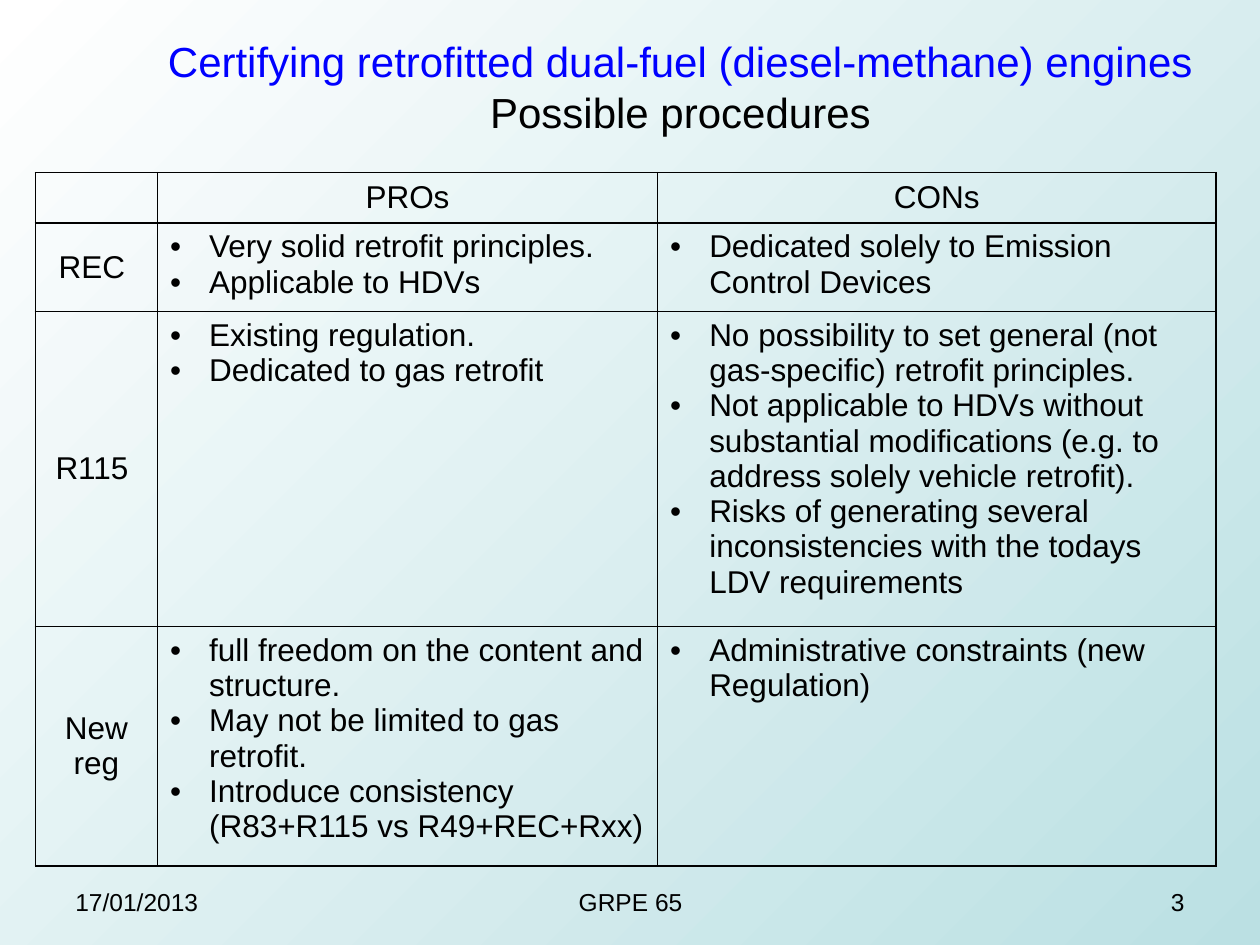
from dataclasses import dataclass

from lxml import etree
from pptx import Presentation
from pptx.dml.color import RGBColor
from pptx.enum.text import MSO_ANCHOR, PP_ALIGN
from pptx.oxml.ns import qn
from pptx.util import Inches, Pt

LEFT, CENTER, RIGHT = PP_ALIGN.LEFT, PP_ALIGN.CENTER, PP_ALIGN.RIGHT
TOP, MIDDLE = MSO_ANCHOR.TOP, MSO_ANCHOR.MIDDLE


@dataclass(frozen=True)
class Theme:
    font: str = "Arial"
    ink: str = "000000"
    accent: str = "0000FF"
    paper: tuple = ("FFFFFF", "BBE0E3")
    title: int = 24
    body: int = 18
    footer: int = 14
    border: int = 1
    indent: float = 0.31


class Deck:
    """Draws elements on the current slide, on a grid of 100 columns by 75 rows."""

    def __init__(self, theme):
        self.theme = theme
        self.prs = Presentation()
        self.prs.slide_width, self.prs.slide_height = Inches(10), Inches(7.5)
        self.s = self.prs.slides.add_slide(self.prs.slide_layouts[6])

    def x(self, columns):
        return round(self.prs.slide_width * columns / 100)

    def y(self, rows):
        return round(self.prs.slide_height * rows / 75)

    def background(self):
        fill = self.s.background.fill
        fill.gradient()
        fill.gradient_angle = 315
        for stop, color in zip(fill.gradient_stops, self.theme.paper):
            stop.color.rgb = RGBColor.from_string(color)

    def style(self, p, size, align, colors=None):
        p.alignment = align
        for i, r in enumerate(p.runs):
            r.font.name = self.theme.font
            r.font.size = Pt(size)
            color = colors[i] if colors else self.theme.ink
            r.font.color.rgb = RGBColor.from_string(color)

    def text(self, box, text, size, align=LEFT, anchor=TOP, colors=None):
        left, top, width, height = box
        sp = self.s.shapes.add_textbox(self.x(left), self.y(top), self.x(width), self.y(height))
        tf = sp.text_frame
        tf.word_wrap = True
        tf.vertical_anchor = anchor
        p = tf.paragraphs[0]
        p.text = text
        self.style(p, size, align, colors)

    def bullet(self, p):
        pPr = p._p.get_or_add_pPr()
        indent = Inches(self.theme.indent)
        pPr.set("marL", str(indent))
        pPr.set("indent", str(-indent))
        etree.SubElement(pPr, qn("a:buFont"), typeface=self.theme.font)
        etree.SubElement(pPr, qn("a:buChar"), char="•")

    def borders(self, cell):
        tcPr = cell._tc.get_or_add_tcPr()
        for side in ("a:lnL", "a:lnR", "a:lnT", "a:lnB"):
            ln = etree.SubElement(tcPr, qn(side), w=str(Pt(self.theme.border)))
            fill = etree.SubElement(ln, qn("a:solidFill"))
            etree.SubElement(fill, qn("a:srgbClr"), val=self.theme.ink)

    def cell(self, cell, text, bulleted):
        self.borders(cell)
        cell.fill.background()
        cell.vertical_anchor = TOP if bulleted else MIDDLE
        cell.text_frame.text = text
        for p in cell.text_frame.paragraphs:
            if bulleted:
                self.bullet(p)
            self.style(p, self.theme.body, LEFT if bulleted else CENTER)

    def table(self, left, top, widths, heights, rows):
        table = self.s.shapes.add_table(
            len(heights), len(widths), self.x(left), self.y(top),
            self.x(sum(widths)), self.y(sum(heights))).table
        table.first_row = table.horz_banding = False
        for column, width in zip(table.columns, widths):
            column.width = self.x(width)
        for row, height in zip(table.rows, heights):
            row.height = self.y(height)
        for i, row in enumerate(rows):
            for j, text in enumerate(row):
                self.cell(table.cell(i, j), text, bulleted=i > 0 and j > 0)


PROCEDURES = [
    ("", "PROs", "CONs"),
    ("REC ",
     "Very solid retrofit principles.\nApplicable to HDVs",
     "Dedicated solely to Emission Control Devices"),
    ("R115 ",
     "Existing regulation.\nDedicated to gas retrofit",
     "No possibility to set general (not gas-specific) retrofit principles.\n"
     "Not applicable to HDVs without substantial modifications "
     "(e.g. to address solely vehicle retrofit).\n"
     "Risks of generating several inconsistencies with the todays LDV requirements"),
    ("New\nreg",
     "full freedom on the content and structure.\n"
     "May not be limited to gas retrofit.\n"
     "Introduce consistency (R83+R115 vs R49+REC+Rxx)",
     "Administrative constraints (new Regulation)"),
]
FOOTERS = [
    (5, 23.3, "17/01/2013", LEFT),
    (34.2, 31.7, "GRPE 65", CENTER),
    (71.7, 23.3, "3", RIGHT),
]


def main():
    theme = Theme()
    deck = Deck(theme)
    deck.background()
    deck.text((11.5, 2.9, 85, 7.9),
              "Certifying retrofitted dual-fuel (diesel-methane) engines\vPossible procedures",
              theme.title, CENTER, MIDDLE, (theme.accent, theme.ink))
    for left, width, text, align in FOOTERS:
        deck.text((left, 69.9, width, 3.6), text, theme.footer, align)
    deck.table(2.8, 13.7, (9.7, 39.7, 44.3), (3.9, 6.8, 24.4, 18.5), PROCEDURES)
    deck.prs.save("out.pptx")


if __name__ == "__main__":
    main()
